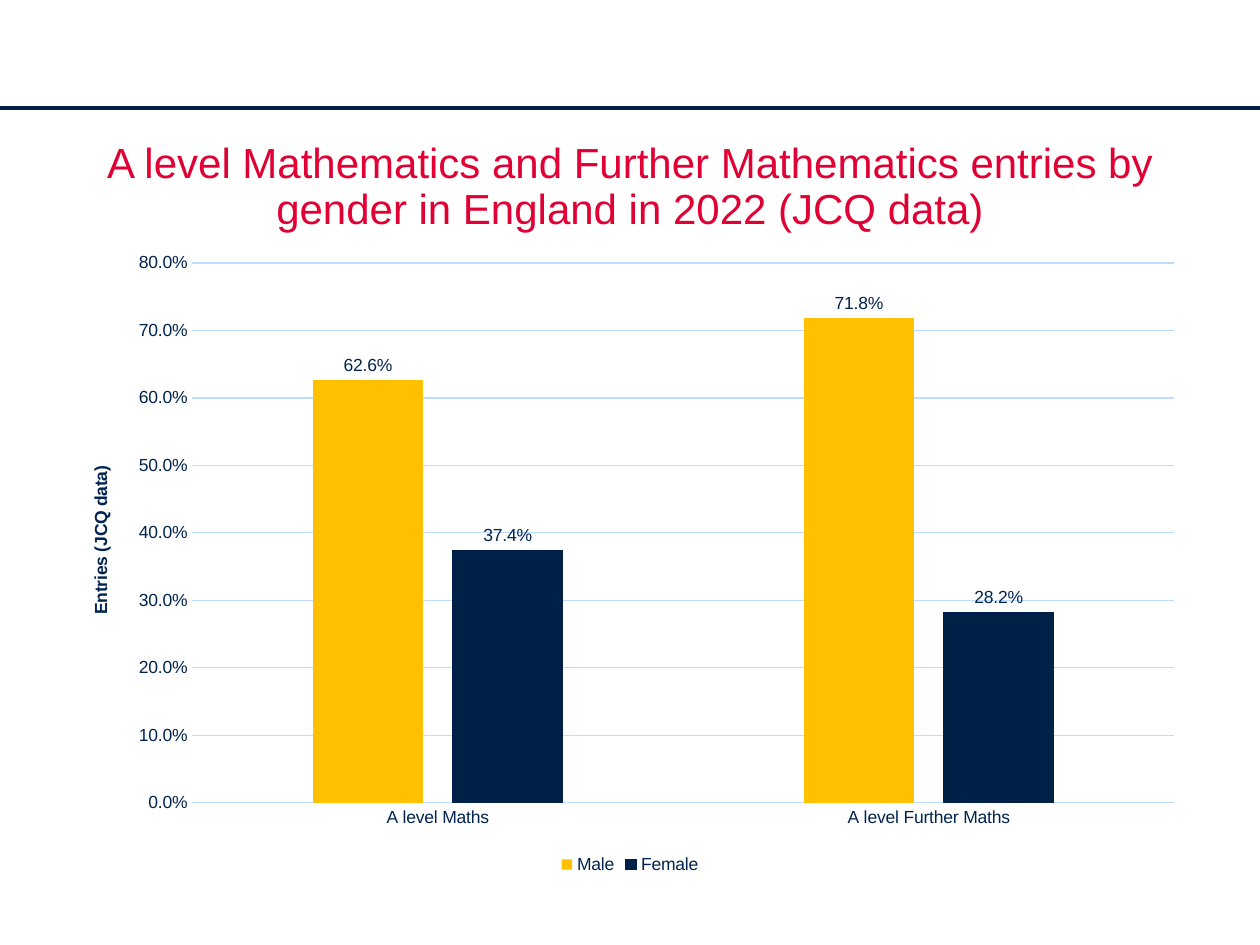
import pptx
import pptx.chart.data
import pptx.dml.color
import pptx.enum.chart
import pptx.enum.shapes
import pptx.enum.text
import pptx.oxml.ns
import pptx.oxml.xmlchemy
import pptx.util

NAVY, AXIS_NAVY, RED, AMBER, PALE_BLUE = "002147", "002350", "E00034", "FFC000", "BDDCFF"
PERCENT = "0.0%"


def rgb(value):
    return pptx.dml.color.RGBColor.from_string(value)


def element(tag):
    return pptx.oxml.xmlchemy.OxmlElement(tag)


def style_font(font, size, color, bold=False):
    font.name = "Arial"
    font.size = pptx.util.Pt(size)
    font.bold = bold
    font.color.rgb = rgb(color)


def style_line(line, color, width):
    line.color.rgb = rgb(color)
    line.width = pptx.util.Pt(width)


def add_header_rule(slide, left, top, width):
    rule = slide.shapes.add_connector(
        pptx.enum.shapes.MSO_CONNECTOR.STRAIGHT, left, top, left + width, top)
    style_line(rule.line, NAVY, 2.25)
    rule._element.spPr.append(element("a:effectLst"))


def add_title(slide, left, top, width, height, wording):
    frame = slide.shapes.add_textbox(left, top, width, height).text_frame
    frame.word_wrap = True
    frame.vertical_anchor = pptx.enum.text.MSO_ANCHOR.MIDDLE
    heading = frame.paragraphs[0]
    heading.text = wording
    heading.alignment = pptx.enum.text.PP_ALIGN.CENTER
    heading.line_spacing = 0.9
    style_font(heading.font, 24, RED)


def fix_plot_area(chart, **fractions):
    """Hold the inner plot area at the given fractions of the chart box."""
    plot_area = chart._chartSpace.chart.plotArea
    for old in plot_area.findall(pptx.oxml.ns.qn("c:layout")):
        plot_area.remove(old)
    layout = element("c:layout")
    manual = element("c:manualLayout")
    settings = [("layoutTarget", "inner"), ("xMode", "edge"), ("yMode", "edge")]
    for tag, value in settings + list(fractions.items()):
        setting = element(f"c:{tag}")
        setting.set("val", str(value))
        manual.append(setting)
    layout.append(manual)
    plot_area.insert(0, layout)


def add_entries_chart(slide, left, top, width, height):
    entries = pptx.chart.data.CategoryChartData(number_format=PERCENT)
    entries.categories = ["A level Maths", "A level Further Maths"]
    entries.add_series("Male", [0.626, 0.718])
    entries.add_series("Female", [0.374, 0.282])
    chart = slide.shapes.add_chart(
        pptx.enum.chart.XL_CHART_TYPE.COLUMN_CLUSTERED,
        left, top, width, height, entries).chart
    chart.has_title = False
    style_font(chart.font, 10, NAVY)
    fix_plot_area(chart, x=0.114, y=0.035, w=0.866, h=0.845)

    # Columns and their labels
    plot = chart.plots[0]
    plot.vary_by_categories = False
    plot.gap_width = 219
    plot.overlap = -27
    for series, color in zip(plot.series, (AMBER, NAVY)):
        series.format.fill.solid()
        series.format.fill.fore_color.rgb = rgb(color)
        labels = series.data_labels
        labels.show_value = True
        labels.number_format = PERCENT
        labels.number_format_is_linked = False
        labels.position = pptx.enum.chart.XL_LABEL_POSITION.OUTSIDE_END
        style_font(labels.font, 10, AXIS_NAVY)
    style_line(plot.series[1].format.line, NAVY, 0.75)

    # Axes
    for axis in (chart.category_axis, chart.value_axis):
        axis.major_tick_mark = pptx.enum.chart.XL_TICK_MARK.NONE
        axis.minor_tick_mark = pptx.enum.chart.XL_TICK_MARK.NONE
        style_font(axis.tick_labels.font, 10, AXIS_NAVY)
    style_line(chart.category_axis.format.line, PALE_BLUE, 0.75)

    share_axis = chart.value_axis
    share_axis.minimum_scale = 0
    share_axis.maximum_scale = 0.8
    share_axis.major_unit = 0.1
    share_axis.tick_labels.number_format = PERCENT
    share_axis.tick_labels.number_format_is_linked = False
    share_axis.format.line.fill.background()
    style_line(share_axis.major_gridlines.format.line, PALE_BLUE, 0.75)
    caption = share_axis.axis_title.text_frame.paragraphs[0]
    caption.text = "Entries (JCQ data)"
    style_font(caption.font, 10, AXIS_NAVY, bold=True)

    # Legend
    chart.has_legend = True
    chart.legend.position = pptx.enum.chart.XL_LEGEND_POSITION.BOTTOM
    chart.legend.include_in_layout = False
    style_font(chart.legend.font, 10, AXIS_NAVY)


def main():
    inches = pptx.util.Inches
    deck = pptx.Presentation()
    deck.slide_width, deck.slide_height = inches(10), inches(7.5)
    slide = deck.slides.add_slide(deck.slide_layouts[6])
    add_header_rule(slide, 0, inches(0.86), deck.slide_width)
    add_title(slide, inches(0.5), inches(1.07), inches(9), inches(0.84),
              "A level Mathematics and Further Mathematics entries by "
              "gender in England in 2022 (JCQ data)")
    add_entries_chart(slide, inches(0.5), inches(1.91), inches(9), inches(5.07))
    deck.save("out.pptx")


if __name__ == "__main__":
    main()
